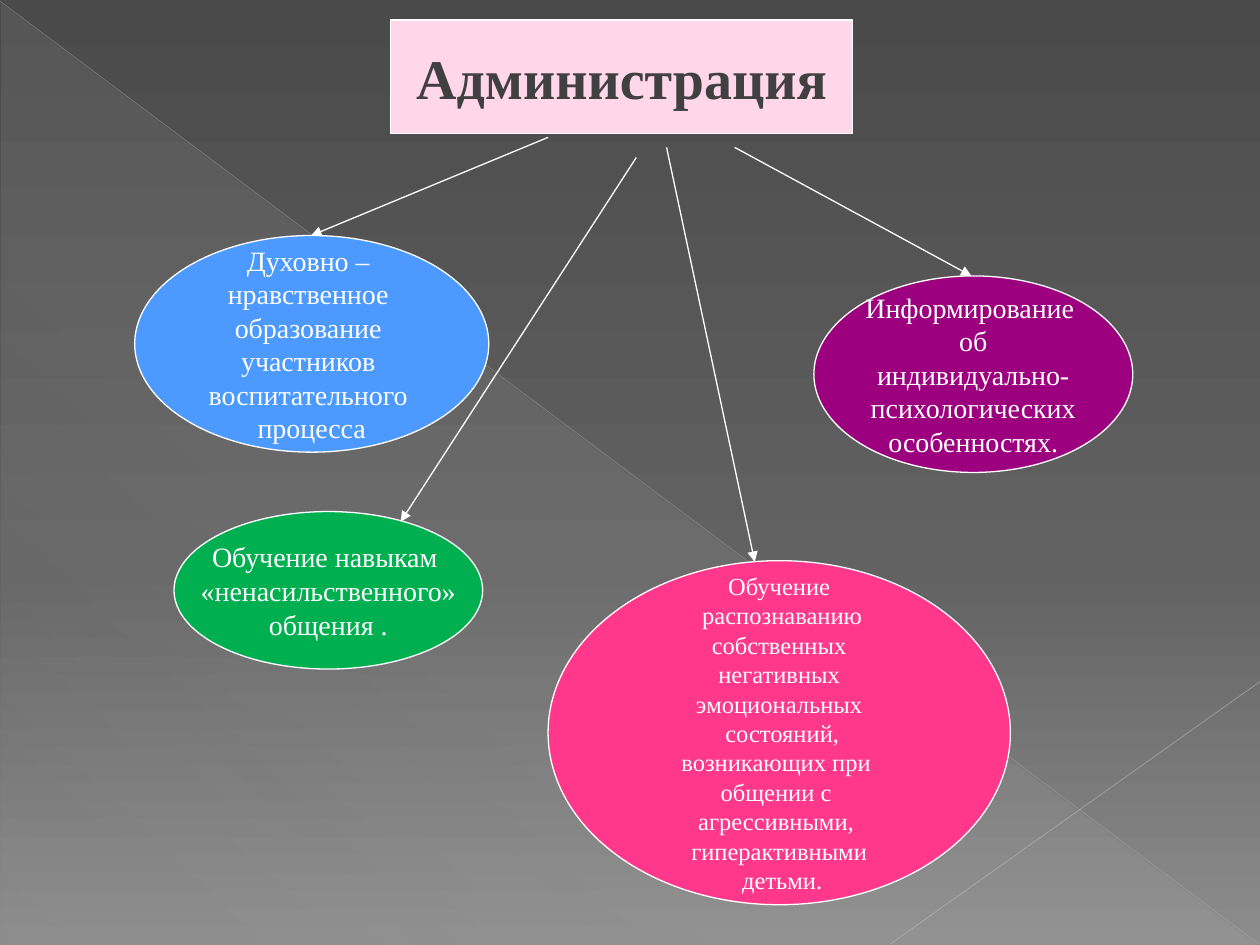
import pptx
import pptx.dml.color
import pptx.enum.shapes
import pptx.enum.text
import pptx.oxml.ns
import pptx.util
from lxml import etree

Pt = pptx.util.Pt
qn = pptx.oxml.ns.qn
SHAPES = pptx.enum.shapes.MSO_SHAPE

FONT = "Times New Roman"
COLORS = {
    "top": "4A4A4A", "middle": "626262", "bottom": "8C8C8C",
    "veil": "D2D2D2", "diagonal": "BFBFBF", "corner": "C6C6C6",
    "title": "FFD7E8", "title_text": "404040", "white": "FFFFFF",
    "skills": "00B050", "emotions": "FF388C",
    "informing": "9C007F", "morals": "4C99FF",
}

TOPICS = [
    ("skills", (99.4, 292.3, 176.4, 90), 16,
     "Обучение навыкам \n«ненасильственного»\nобщения ."),
    ("emotions", (313.2, 320.4, 264.2, 196.6), 14,
     "Обучение\n распознаванию\nсобственных\nнегативных\nэмоциональных\n"
     " состояний,\nвозникающих при \nобщении с \nагрессивными, \n"
     "гиперактивными\n детьми."),
    ("informing", (465.1, 157.7, 182.2, 112.3), 16,
     "Информирование \nоб\nиндивидуально-\nпсихологических\nособенностях."),
    ("morals", (77, 134.6, 202.3, 123.8), 16,
     "Духовно – \nнравственное \nобразование \nучастников \n"
     "воспитательного \nпроцесса"),
]

ARROWS = [
    (313.2, 78.5, 177.8, 134.6),
    (419.8, 84.2, 555.1, 157.7),
    (363.6, 90, 229, 298.1),
    (380.9, 84.2, 431.3, 321.1),
]


def rgb(name):
    return pptx.dml.color.RGBColor.from_string(COLORS[name])


def add_alpha(color, opacity):
    etree.SubElement(color, qn("a:alpha"), val=str(opacity * 1000))


def set_gradient(fill, owner, stops, angle):
    fill.gradient()
    gradient = owner.find(".//" + qn("a:gradFill"))
    for child in list(gradient):
        gradient.remove(child)
    stop_list = etree.SubElement(gradient, qn("a:gsLst"))
    for position, name, opacity in stops:
        stop = etree.SubElement(stop_list, qn("a:gs"), pos=str(position * 1000))
        color = etree.SubElement(stop, qn("a:srgbClr"), val=COLORS[name])
        if opacity < 100:
            add_alpha(color, opacity)
    etree.SubElement(gradient, qn("a:lin"), ang=str(angle * 60000), scaled="0")


def add_line(slide, ends, color, width, opacity=100, arrow=False):
    line = slide.shapes.add_connector(
        pptx.enum.shapes.MSO_CONNECTOR.STRAIGHT, *map(Pt, ends))
    line.line.color.rgb = rgb(color)
    line.line.width = Pt(width)
    properties = line._element.spPr
    if opacity < 100:
        add_alpha(properties.find(".//" + qn("a:srgbClr")), opacity)
    if arrow:
        etree.SubElement(properties.find(qn("a:ln")), qn("a:tailEnd"), type="triangle")
    etree.SubElement(properties, qn("a:effectLst"))


def add_label(slide, kind, box, fill, text, size, color="white", bold=False):
    label = slide.shapes.add_shape(kind, *map(Pt, box))
    label.shadow.inherit = False
    label.fill.solid()
    label.fill.fore_color.rgb = rgb(fill)
    label.line.color.rgb = rgb("white")
    label.line.width = Pt(0.75)
    frame = label.text_frame
    frame.word_wrap = False
    frame.vertical_anchor = pptx.enum.text.MSO_ANCHOR.MIDDLE
    frame.text = text
    for paragraph in frame.paragraphs:
        paragraph.alignment = pptx.enum.text.PP_ALIGN.CENTER
        paragraph.font.name = FONT
        paragraph.font.size = Pt(size)
        paragraph.font.bold = bold
        paragraph.font.color.rgb = rgb(color)


def add_backdrop(slide):
    set_gradient(slide.background.fill, slide._element,
                 [(0, "top", 100), (60, "middle", 100), (100, "bottom", 100)], 90)
    veil = slide.shapes.add_shape(
        SHAPES.RIGHT_TRIANGLE, *map(Pt, (0.7, 1.4, 718.6, 538.6)))
    veil.shadow.inherit = False
    veil.line.fill.background()
    set_gradient(veil.fill, veil._element,
                 [(0, "veil", 10), (70, "veil", 8), (100, "veil", 1)], 133)
    add_line(slide, (0, 0.7, 719.3, 539.3), "diagonal", 0.39, opacity=35)
    add_line(slide, (720, 389.5, 509, 539.3), "corner", 0.47, opacity=45)


def main():
    deck = pptx.Presentation()
    deck.slide_width, deck.slide_height = Pt(720), Pt(540)
    slide = deck.slides.add_slide(deck.slide_layouts[6])
    add_backdrop(slide)
    add_label(slide, SHAPES.RECTANGLE, (223.2, 11.5, 264.2, 64.8), "title",
              "Администрация", 32, color="title_text", bold=True)
    for fill, box, size, text in TOPICS:
        add_label(slide, SHAPES.OVAL, box, fill, text, size)
    for ends in ARROWS:
        add_line(slide, ends, "white", 0.75, arrow=True)
    deck.save("out.pptx")


if __name__ == "__main__":
    main()
